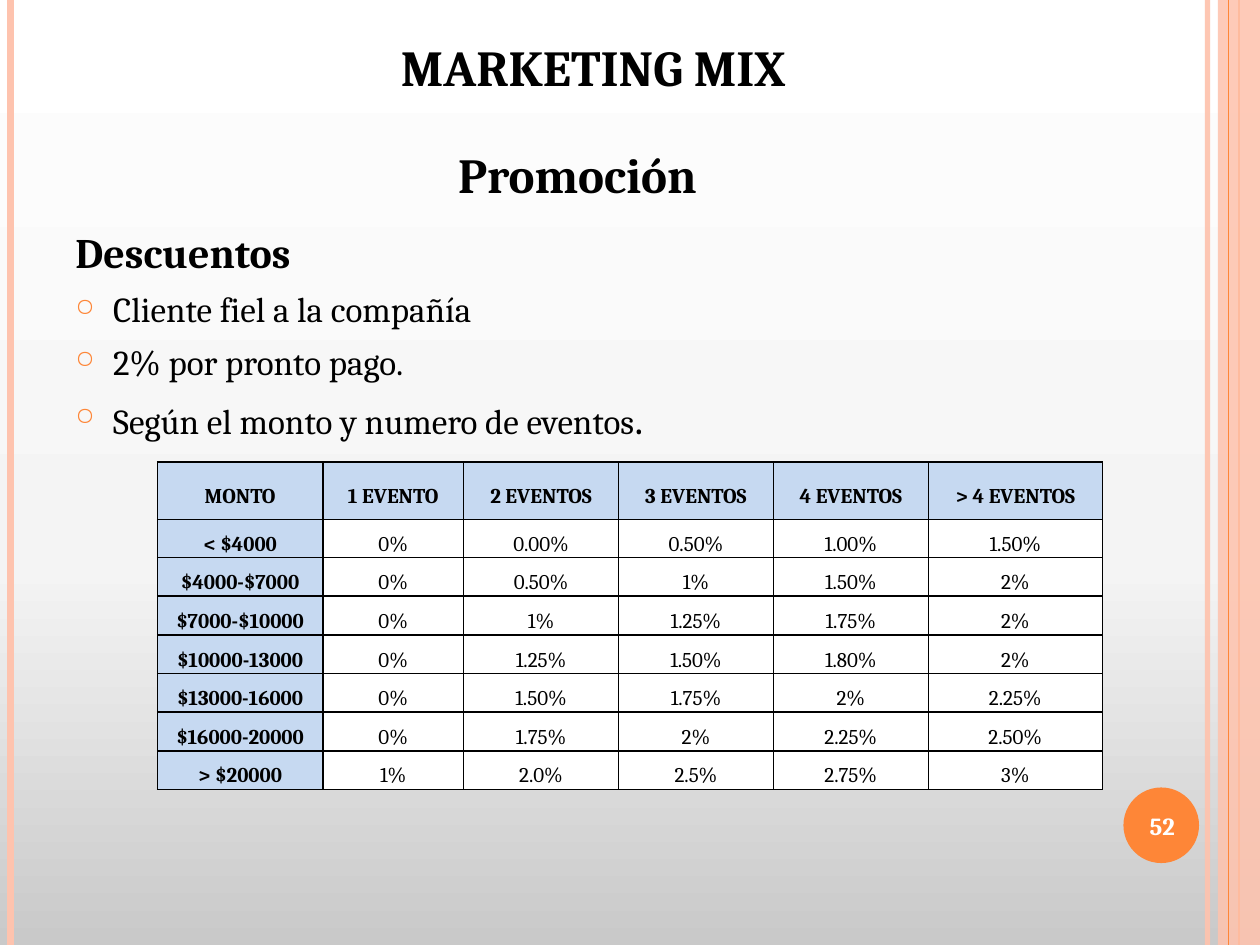
import copy
from dataclasses import dataclass
import lxml.etree
import pptx
import pptx.dml.color
import pptx.enum.shapes
import pptx.enum.text
import pptx.oxml.ns
import pptx.util

Pt = pptx.util.Pt
qn = pptx.oxml.ns.qn
Align = pptx.enum.text.PP_ALIGN
Anchor = pptx.enum.text.MSO_ANCHOR
Shape = pptx.enum.shapes.MSO_SHAPE


@dataclass(frozen=True)
class Theme:
    font: str = "Cambria"
    ink: str = "000000"
    white: str = "FFFFFF"
    peach: str = "FEC3AE"
    orange: str = "FE8637"
    blue: str = "C6D9F1"
    fade: tuple = ((0, "C9C9C9"), (0.4, "F4F4F4"), (1, "FFFFFF"))
    title: float = 28.8
    topic: float = 28
    head: float = 24
    body: float = 20
    cell: float = 12
    badge: float = 14


THEME = Theme()

RULES = (
    (690, THEME.peach, 3, 93),
    (6, THEME.peach, 4.5, 100),
    (708, THEME.orange, 1.5, 100),
)
EDGE = (702, THEME.orange, 0.75, 100)

POINTS = (
    (("Descuentos", THEME.head, True),),
    (("Cliente fiel a la compañía", THEME.body, False),),
    (("2% por pronto pago.", THEME.body, False),),
    (("Según el monto y numero de eventos", THEME.body, False), (".", THEME.head, False)),
)

COLS = (94.5, 80.5, 88.5, 88.5, 88.5, 99.5)
ROWS = (33, 21) + (22.1,) * 6
RATES = (
    ("MONTO", "1 EVENTO", "2 EVENTOS", "3 EVENTOS", "4 EVENTOS", "> 4 EVENTOS"),
    ("< $4000", "0%", "0.00%", "0.50%", "1.00%", "1.50%"),
    ("$4000-$7000", "0%", "0.50%", "1%", "1.50%", "2%"),
    ("$7000-$10000", "0%", "1%", "1.25%", "1.75%", "2%"),
    ("$10000-13000", "0%", "1.25%", "1.50%", "1.80%", "2%"),
    ("$13000-16000", "0%", "1.50%", "1.75%", "2%", "2.25%"),
    ("$16000-20000", "0%", "1.75%", "2%", "2.25%", "2.50%"),
    ("> $20000", "1%", "2.0%", "2.5%", "2.75%", "3%"),
)


def rgb(code):
    return pptx.dml.color.RGBColor.from_string(code)


def apply(item, form):
    for name, value in form.items():
        setattr(item, name, value)


def add(parent, tag, **attrs):
    return lxml.etree.SubElement(parent, qn(tag), attrs)


def solid(fill, code):
    fill.solid()
    fill.fore_color.rgb = rgb(code)


def veil(item, alpha):
    if alpha < 100:
        color = next(item.element.spPr.iter(qn("a:srgbClr")))
        add(color, "a:alpha", val=str(alpha * 1000))


def write(para, text, size, bold=True, color=THEME.ink):
    run = para.add_run()
    run.text = text
    apply(run.font, {"name": THEME.font, "size": Pt(size), "bold": bold})
    run.font.color.rgb = rgb(color)


def frame(slide, box, **form):
    text = slide.shapes.add_textbox(*map(Pt, box)).text_frame
    apply(text, {"word_wrap": True, **form})
    return text


def label(slide, box, text, size, color=THEME.ink, **form):
    para = frame(slide, box, vertical_anchor=Anchor.MIDDLE, **form).paragraphs[0]
    para.alignment = Align.CENTER
    write(para, text, size, color=color)


def ground(slide):
    fill = slide.background.fill
    fill.gradient()
    fill.gradient_angle = 90
    stops = next(slide.element.iter(qn("a:gsLst")))
    stops.append(copy.deepcopy(stops[0]))
    for stop, (spot, code) in zip(fill.gradient_stops, THEME.fade):
        stop.position = spot
        stop.color.rgb = rgb(code)


def rule(slide, box, left, code, width, alpha):
    x, y, _, high = box
    line = slide.shapes.add_connector(
        pptx.enum.shapes.MSO_CONNECTOR.STRAIGHT,
        Pt(x + left), Pt(y), Pt(x + left), Pt(y + high))
    line.line.color.rgb = rgb(code)
    line.line.width = Pt(width)
    veil(line, alpha)
    add(line.element.spPr, "a:effectLst")


def block(slide, kind, box, code, alpha=100):
    shape = slide.shapes.add_shape(kind, *map(Pt, box))
    shape.shadow.inherit = False
    solid(shape.fill, code)
    shape.line.fill.background()
    veil(shape, alpha)


def border(slide, box):
    x, y, wide, high = box
    for item in RULES:
        rule(slide, box, *item)
    block(slide, Shape.RECTANGLE, (x + wide - 24, y, 24, high), THEME.peach, 87)
    rule(slide, box, *EDGE)


def badge(slide, box):
    x, y, wide, high = box
    block(slide, Shape.OVAL, box, THEME.orange)
    label(slide, (x - 2, y + 1, wide + 5, high - 2), "52", THEME.badge, THEME.white)


def points(slide, box):
    text = frame(slide, box)
    for i, runs in enumerate(POINTS):
        para = text.add_paragraph() if i else text.paragraphs[0]
        para.space_before = Pt(6)
        props = para._p.get_or_add_pPr()
        props.set("marL", str(Pt(21.6)))
        props.set("indent", str(Pt(-21.6)))
        if i:
            add(add(props, "a:buClr"), "a:srgbClr", val=THEME.orange)
            add(props, "a:buSzPct", val="70000")
            add(props, "a:buChar", char="○")
        for run in runs:
            write(para, *run)


def outline(cell):
    props = cell._tc.get_or_add_tcPr()
    for i, side in enumerate("LRTB"):
        line = add(props, f"a:ln{side}", w=str(Pt(1)))
        add(add(line, "a:solidFill"), "a:srgbClr", val=THEME.ink)
        props.insert(i, line)


def rates(slide, box):
    table = slide.shapes.add_table(len(ROWS), len(COLS), *map(Pt, box)).table
    apply(table, {"first_row": False, "horz_banding": False})
    for col, wide in zip(table.columns, COLS):
        col.width = Pt(wide)
    for row, high in zip(table.rows, ROWS):
        row.height = Pt(high)
    form = {"margin_left": Pt(5), "margin_right": Pt(5), "margin_top": 0,
            "margin_bottom": 0, "vertical_anchor": Anchor.MIDDLE}
    for r, row in enumerate(RATES):
        for c, text in enumerate(row):
            cell = table.cell(r, c)
            head = r == 0 or c == 0
            apply(cell, form)
            solid(cell.fill, THEME.blue if head else THEME.white)
            outline(cell)
            para = cell.text_frame.paragraphs[0]
            apply(para, {"alignment": Align.CENTER, "line_spacing": 1.5})
            write(para, text, THEME.cell, head)


def main():
    deck = pptx.Presentation()
    apply(deck, {"slide_width": Pt(720), "slide_height": Pt(540)})
    slide = deck.slides.add_slide(deck.slide_layouts[6])
    ground(slide)
    border(slide, (0, 0, 720, 540))
    label(slide, (45, 14, 588, 48), "MARKETING MIX", THEME.title)
    points(slide, (36, 126, 588, 384))
    rates(slide, (90, 264, 540, 187))
    label(slide, (242, 79, 176, 41), "Promoción", THEME.topic, word_wrap=False)
    badge(slide, (642, 450, 43.2, 43.2))
    deck.save("out.pptx")


if __name__ == "__main__":
    main()
